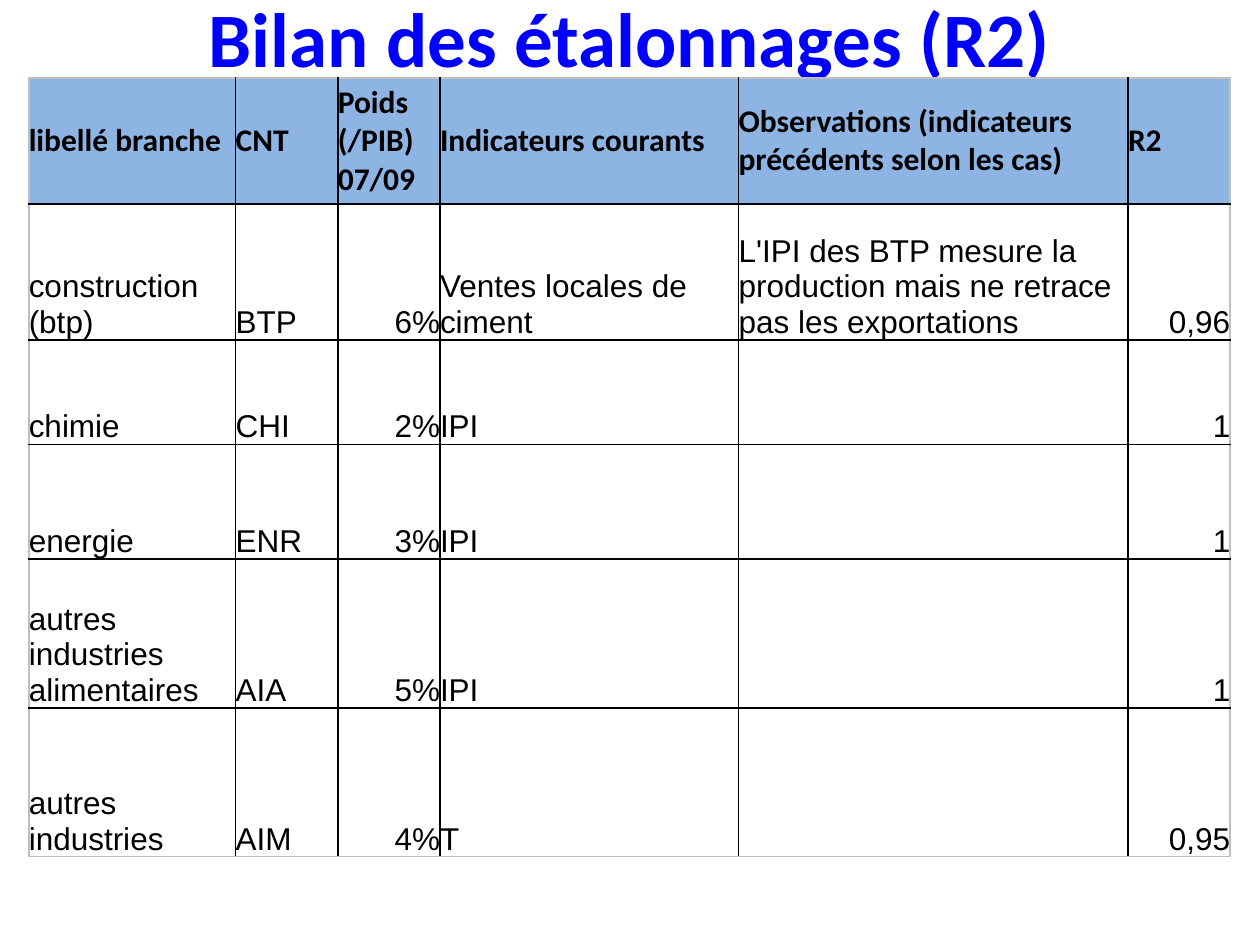
import pptx
import pptx.util
import pptx.dml.color
import pptx.enum.text
import pptx.oxml
import pptx.oxml.ns

Cm = pptx.util.Cm
Align = pptx.enum.text.PP_ALIGN
Anchor = pptx.enum.text.MSO_ANCHOR

HUES = {"title": "0000FF", "text": "000000", "head": "8EB4E3",
        "grid": "000000", "edge": "BFBFBF"}

COLS = [4.17, 2.06, 2.06, 6.02, 7.85, 2.06]
ROWS = [2.54, 2.74, 2.11, 2.31, 3, 3]
RIGHT = {2, 5}

DATA = [
    ["libellé branche", "CNT", "Poids (/PIB) 07/09", "Indicateurs courants",
     "Observations (indicateurs précédents selon les cas)", "R2"],
    ["construction (btp)", "BTP", "6%", "Ventes locales de ciment",
     "L'IPI des BTP mesure la production mais ne retrace pas les exportations",
     "0,96"],
    ["chimie", "CHI", "2%", "IPI", "", "1"],
    ["energie", "ENR", "3%", "IPI", "", "1"],
    ["autres industries alimentaires", "AIA", "5%", "IPI", "", "1"],
    ["autres industries", "AIM", "4%", "T", "", "0,95"],
]


def rgb(name):
    return pptx.dml.color.RGBColor.from_string(HUES[name])


def put_text(frame, text, font="Arial", size=18, bold=False, hue="text",
             align=Align.LEFT):
    frame.word_wrap = True
    para = frame.paragraphs[0]
    para.alignment = align
    para.font.size = pptx.util.Pt(size)
    if text:
        run = para.add_run()
        run.text = text
        run.font.name = font
        run.font.size = pptx.util.Pt(size)
        run.font.bold = bold
        run.font.color.rgb = rgb(hue)


def add_line(cell, side, hue):
    space = pptx.oxml.ns.nsdecls("a")
    cell._tc.get_or_add_tcPr().append(pptx.oxml.parse_xml(
        f'<a:ln{side} {space} w="12700"><a:solidFill>'
        f'<a:srgbClr val="{HUES[hue]}"/></a:solidFill></a:ln{side}>'))


def add_title(slide, left, top, width, height):
    box = slide.shapes.add_textbox(Cm(left), Cm(top), Cm(width), Cm(height))
    box.text_frame.vertical_anchor = Anchor.MIDDLE
    put_text(box.text_frame, "Bilan des étalonnages (R2)", font="Calibri",
             size=44, bold=True, hue="title", align=Align.CENTER)


def fill_cell(cell, text, row, col):
    head = row == 0
    cell.margin_left = cell.margin_right = 0
    cell.margin_top = cell.margin_bottom = 0
    cell.vertical_anchor = Anchor.MIDDLE if head else Anchor.BOTTOM
    edges = {"L": col == 0, "R": col == len(COLS) - 1,
             "T": row == 0, "B": row == len(ROWS) - 1}
    for side, outer in edges.items():
        add_line(cell, side, "edge" if outer else "grid")
    if head:
        cell.fill.solid()
        cell.fill.fore_color.rgb = rgb("head")
    else:
        cell.fill.background()
    right = not head and col in RIGHT
    put_text(cell.text_frame, text, font="Calibri" if head else "Arial",
             bold=head, align=Align.RIGHT if right else Align.LEFT)


def add_grid(slide, left, top):
    frame = slide.shapes.add_table(len(ROWS), len(COLS), Cm(left), Cm(top),
                                   Cm(sum(COLS)), Cm(sum(ROWS)))
    table = frame.table
    table.horz_banding = False
    for col, width in zip(table.columns, COLS):
        col.width = Cm(width)
    for row, height in zip(table.rows, ROWS):
        row.height = Cm(height)
    for row, texts in enumerate(DATA):
        for col, text in enumerate(texts):
            fill_cell(table.cell(row, col), text, row, col)


def main():
    deck = pptx.Presentation()
    deck.slide_width, deck.slide_height = Cm(25.4), Cm(19.05)
    slide = deck.slides.add_slide(deck.slide_layouts[6])
    add_title(slide, 1.27, -0.84, 22.86, 3.18)
    add_grid(slide, 0.58, 1.57)
    deck.save("out.pptx")


if __name__ == "__main__":
    main()
